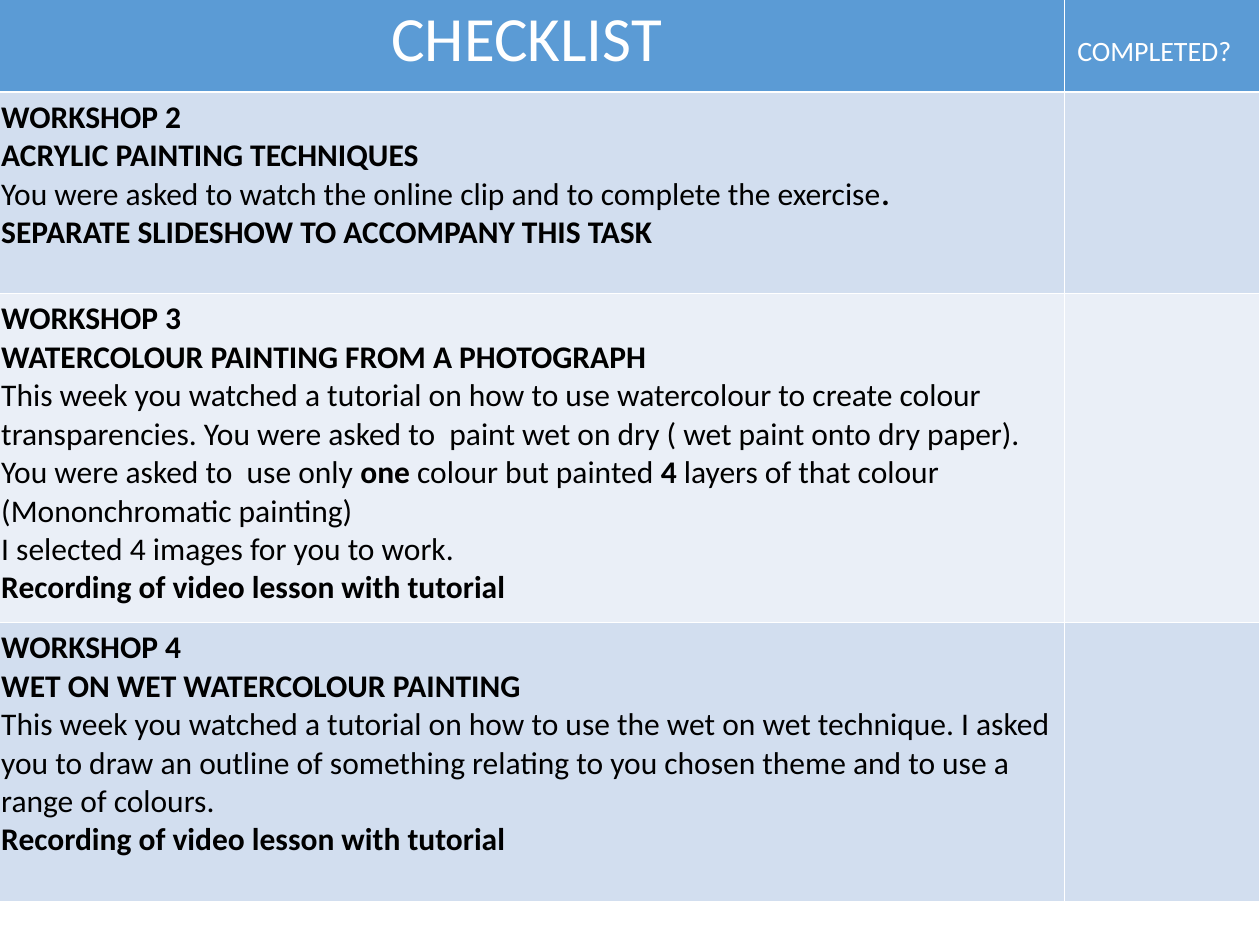
from dataclasses import dataclass

import pptx
import pptx.dml.color
import pptx.enum.text
import pptx.oxml
import pptx.oxml.ns
import pptx.util
from pptx.util import Inches

FONT = "Calibri"
COLORS = {
    "head": "5B9BD5",
    "dark": "D2DEEF",
    "light": "EAEFF7",
    "white": "FFFFFF",
    "black": "000000",
}
ALIGN = pptx.enum.text.PP_ALIGN


@dataclass
class Entry:
    lines: list[str]
    fill: str
    size: int = 18
    color: str = "black"
    align: ALIGN = ALIGN.LEFT
    top: float = 0.05


@dataclass
class Row:
    height: float
    cells: list[Entry]


def task(height: float, fill: str, lines: list[str]) -> Row:
    return Row(height, [Entry(lines, fill), Entry([], fill)])


ROWS = [
    Row(0.77, [
        Entry(["CHECKLIST"], "head", 36, "white", ALIGN.CENTER),
        Entry(["COMPLETED?"], "head", 16, "white", top=0.32),
    ]),
    task(1.6, "dark", [
        "*WORKSHOP 2*",
        "*ACRYLIC PAINTING TECHNIQUES*",
        "You were asked to watch the online clip and to complete the exercise*.*",
        "*SEPARATE SLIDESHOW TO ACCOMPANY THIS TASK*",
    ]),
    task(2.61, "light", [
        "*WORKSHOP 3*",
        "*WATERCOLOUR PAINTING FROM A PHOTOGRAPH*",
        "This week you watched a tutorial on how to use watercolour to create "
        "colour transparencies. You were asked to  paint wet on dry "
        "( wet paint onto dry paper).",
        "You were asked to  use only *one* colour but painted *4* layers of "
        "that colour (Mononchromatic painting)",
        "I selected 4 images for you to work.",
        "*Recording of video lesson with tutorial*",
    ]),
    task(2.22, "dark", [
        "*WORKSHOP 4*",
        "*WET ON WET WATERCOLOUR PAINTING*",
        "This week you watched a tutorial on how to use the wet on wet "
        "technique. I asked you to draw an outline of something relating to "
        "you chosen theme and to use a range of colours.",
        "*Recording of video lesson with tutorial*",
    ]),
]
WIDTHS = [8.54, 1.55]


def rgb(name: str) -> pptx.dml.color.RGBColor:
    return pptx.dml.color.RGBColor.from_string(COLORS[name])


def edge(cell, width: float) -> None:
    props = cell._tc.get_or_add_tcPr()
    for side in "LRTB":
        props.append(pptx.oxml.parse_xml(
            f'<a:ln{side} {pptx.oxml.ns.nsdecls("a")} w="{pptx.util.Pt(width)}">'
            f'<a:solidFill><a:srgbClr val="{COLORS["white"]}"/></a:solidFill>'
            f"</a:ln{side}>"
        ))


def write(frame, entry: Entry) -> None:
    for i, line in enumerate(entry.lines):
        para = frame.add_paragraph() if i else frame.paragraphs[0]
        para.alignment = entry.align
        for j, text in enumerate(line.split("*")):
            if not text:
                continue
            run = para.add_run()
            run.text = text
            run.font.name = FONT
            run.font.size = pptx.util.Pt(entry.size)
            run.font.bold = j % 2 == 1
            run.font.color.rgb = rgb(entry.color)


def draw(cell, entry: Entry) -> None:
    edge(cell, 1)
    cell.fill.solid()
    cell.fill.fore_color.rgb = rgb(entry.fill)
    cell.margin_top = Inches(entry.top)
    write(cell.text_frame, entry)


def main() -> None:
    deck = pptx.Presentation()
    deck.slide_width, deck.slide_height = Inches(10), Inches(7.5)
    slide = deck.slides.add_slide(deck.slide_layouts[6])
    high = sum(row.height for row in ROWS)
    grid = slide.shapes.add_table(
        len(ROWS), len(WIDTHS), Inches(-0.09), Inches(-0.04),
        Inches(sum(WIDTHS)), Inches(high),
    ).table
    for col, width in zip(grid.columns, WIDTHS):
        col.width = Inches(width)
    for line, row in zip(grid.rows, ROWS):
        line.height = Inches(row.height)
        for cell, entry in zip(line.cells, row.cells):
            draw(cell, entry)
    deck.save("out.pptx")


if __name__ == "__main__":
    main()
